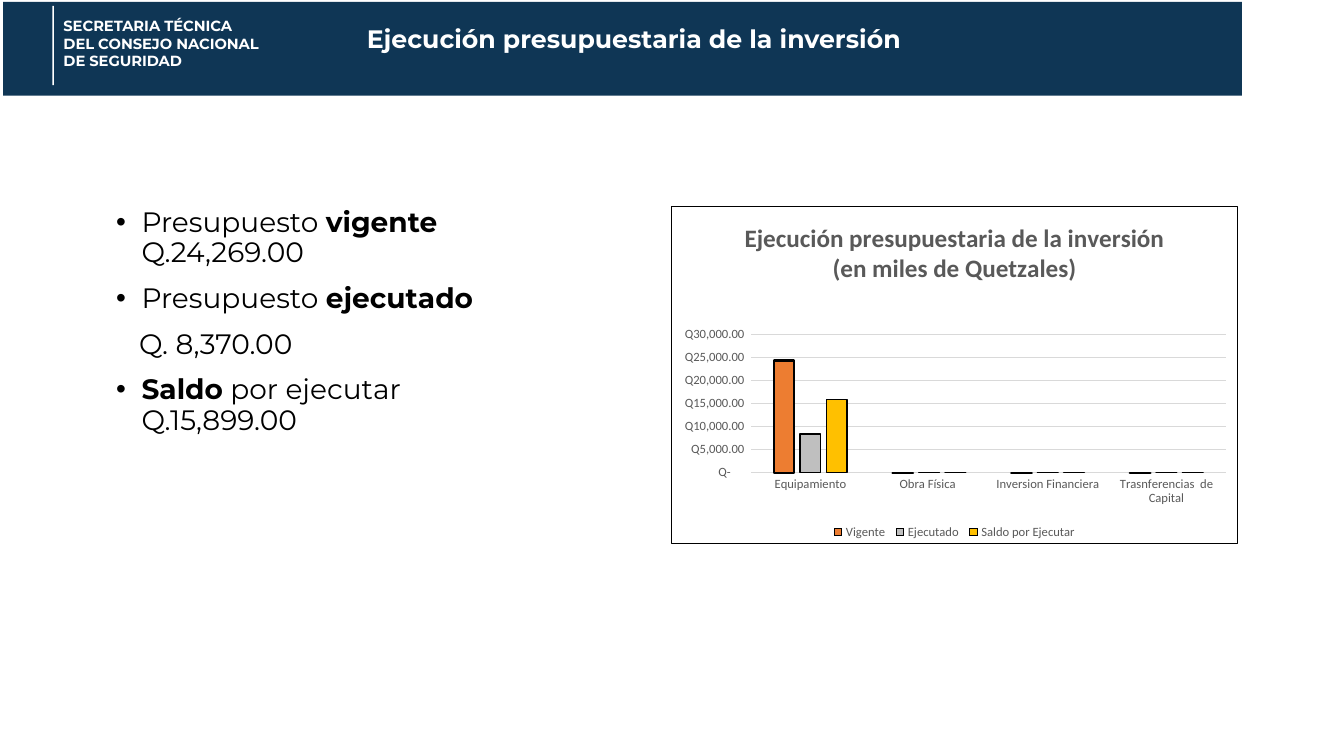
from lxml.etree import SubElement
from pptx import Presentation
from pptx.chart.data import CategoryChartData
from pptx.dml.color import RGBColor
from pptx.enum.chart import XL_CHART_TYPE, XL_LEGEND_POSITION, XL_TICK_MARK
from pptx.enum.shapes import MSO_SHAPE
from pptx.enum.text import MSO_ANCHOR, MSO_AUTO_SIZE, PP_ALIGN
from pptx.oxml import parse_xml
from pptx.oxml.ns import nsdecls, qn
from pptx.util import Cm, Pt

NAVY = RGBColor(0x0F, 0x36, 0x55)
WHITE = RGBColor(0xFF, 0xFF, 0xFF)
BLACK = RGBColor(0x00, 0x00, 0x00)
GREY = RGBColor(0x59, 0x59, 0x59)
GRID = RGBColor(0xD9, 0xD9, 0xD9)
ORANGE = RGBColor(0xED, 0x7D, 0x31)
SILVER = RGBColor(0xBF, 0xBF, 0xBF)
GOLD = RGBColor(0xFF, 0xC0, 0x00)

QUETZAL = '_("Q"* #,##0.00_);_("Q"* \\(#,##0.00\\);_("Q"* "-"??_);_(@_)'
CATEGORIES = ["Equipamiento", "Obra Física ", "Inversion Financiera",
              "Trasnferencias  de Capital"]
SERIES = [  # name, values, fill, outline width
    ("Vigente ", (24300, 0, 0, 0), ORANGE, 1.5),
    ("Ejecutado ", (8400, 0, 0, 0), SILVER, 1),
    ("Saldo por Ejecutar", (15900, 0, 0, 0), GOLD, 1),
]
BUDGET = [  # runs as (text, bold), bulleted
    ([("Presupuesto ", False), ("vigente", True), ("\nQ.24,269.00", False)], True),
    ([("Presupuesto ", False), ("ejecutado", True)], True),
    ([("Q. 8,370.00", False)], False),
    ([("Saldo", True), (" por ejecutar\nQ.15,899.00", False)], True),
]


def set_font(font, size, color, bold=False, name="Montserrat"):
    font.name, font.size, font.bold = name, Pt(size), bold
    font.color.rgb = color


def write(p, text, **fmt):
    """Add text to a paragraph; each newline becomes a line break."""
    for i, line in enumerate(text.split("\n")):
        if i:
            p.add_line_break()
        if line:
            r = p.add_run()
            r.text = line
            set_font(r.font, **fmt)


def add_box(s, x, y, w, h):
    tf = s.shapes.add_textbox(Cm(x), Cm(y), Cm(w), Cm(h)).text_frame
    tf.word_wrap = True
    return tf


def add_bar(s, x, y, w, h, color):
    sp = s.shapes.add_shape(MSO_SHAPE.RECTANGLE, Cm(x), Cm(y), Cm(w), Cm(h))
    sp.shadow.inherit = False
    sp.fill.solid()
    sp.fill.fore_color.rgb = color
    sp.line.fill.background()


def add_header(s, x, y, w, h):
    add_bar(s, x, y, w, h, NAVY)
    tf = add_box(s, x + 1.27, y + 0.25, 9.58, 1.6)
    write(tf.paragraphs[0],
          "SECRETARIA TÉCNICA\nDEL CONSEJO NACIONAL\nDE SEGURIDAD",
          size=10.5, color=WHITE, bold=True)
    add_bar(s, x + 1.24, y + 0.1, 0.04, 2, WHITE)

    title = s.shapes.title
    title.left, title.top = Cm(x + 8.91), Cm(y + 0.41)
    title.width, title.height = Cm(15.44), Cm(1.8)
    tf = title.text_frame
    tf.auto_size = MSO_AUTO_SIZE.NONE
    tf.vertical_anchor = MSO_ANCHOR.TOP
    tf.paragraphs[0].alignment = PP_ALIGN.LEFT
    write(tf.paragraphs[0], "Ejecución presupuestaria de la inversión",
          size=18, color=WHITE, bold=True)
    # The title must lie in front of the band
    title.element.getparent().append(title.element)


def add_budget(s, x, y, w, h):
    tf = add_box(s, x, y, w, h)
    for i, (runs, bulleted) in enumerate(BUDGET):
        p = tf.add_paragraph() if i else tf.paragraphs[0]
        p.line_spacing = 0.9
        p.space_after = Pt(6)
        p.space_before = Pt(5 if i else 0)
        pPr = p._p.get_or_add_pPr()
        pPr.set("marL", str(Cm(1.9 if bulleted else 1.84)))
        if bulleted:
            pPr.set("indent", str(-Cm(0.64)))
            SubElement(pPr, qn("a:buFont")).set("typeface", "Arial")
            SubElement(pPr, qn("a:buChar")).set("char", "•")
        for text, bold in runs:
            write(p, text, size=20, color=BLACK, bold=bold)


def format_chart_title(chart):
    tf = chart.chart_title.text_frame
    lines = ["Ejecución presupuestaria de la inversión", "(en miles de Quetzales)"]
    for i, line in enumerate(lines):
        p = tf.add_paragraph() if i else tf.paragraphs[0]
        write(p, line, size=18, color=GREY, bold=True, name="Calibri")
    chart.chart_title.include_in_layout = False


def format_axes(chart):
    for axis in (chart.category_axis, chart.value_axis):
        axis.major_tick_mark = axis.minor_tick_mark = XL_TICK_MARK.NONE
        set_font(axis.tick_labels.font, 9, GREY, name="Calibri")
    value = chart.value_axis
    value.minimum_scale, value.maximum_scale, value.major_unit = 0, 30000, 5000
    value.tick_labels.number_format = QUETZAL
    value.tick_labels.number_format_is_linked = False
    value.format.line.fill.background()
    for line in (chart.category_axis.format.line, value.major_gridlines.format.line):
        line.color.rgb = GRID
        line.width = Pt(0.75)


def frame_chart(chart):
    """Fix the inner plot area and outline the whole chart."""
    area = chart._chartSpace.chart.plotArea
    for old in area.findall(qn("c:layout")):
        area.remove(old)
    sizes = "".join(f'<c:{k} val="{v}"/>' for k, v in
                    (("x", 0.14), ("y", 0.38), ("w", 0.84), ("h", 0.41)))
    area.insert(0, parse_xml(
        f'<c:layout {nsdecls("c")}><c:manualLayout><c:layoutTarget val="inner"/>'
        f'<c:xMode val="edge"/><c:yMode val="edge"/>{sizes}'
        '</c:manualLayout></c:layout>'))
    chart._chartSpace.chart.addnext(parse_xml(
        f'<c:spPr {nsdecls("c", "a")}><a:solidFill><a:srgbClr val="{WHITE}"/>'
        f'</a:solidFill><a:ln w="{Pt(0.75)}"><a:solidFill><a:srgbClr val="{BLACK}"/>'
        '</a:solidFill></a:ln></c:spPr>'))


def add_budget_chart(s, x, y, w, h):
    data = CategoryChartData(number_format=QUETZAL)
    data.categories = CATEGORIES
    for name, values, _, _ in SERIES:
        data.add_series(name, values)
    chart = s.shapes.add_chart(XL_CHART_TYPE.COLUMN_CLUSTERED,
                               Cm(x), Cm(y), Cm(w), Cm(h), data).chart
    set_font(chart.font, 10, BLACK, name="Calibri")
    format_chart_title(chart)
    format_axes(chart)

    plot = chart.plots[0]
    plot.gap_width, plot.overlap, plot.vary_by_categories = 219, -27, False
    for series, (_, _, color, width) in zip(plot.series, SERIES):
        series.format.fill.solid()
        series.format.fill.fore_color.rgb = color
        series.format.line.color.rgb = BLACK
        series.format.line.width = Pt(width)

    chart.has_legend = True
    chart.legend.position = XL_LEGEND_POSITION.BOTTOM
    chart.legend.include_in_layout = False
    set_font(chart.legend.font, 9, GREY, name="Calibri")
    frame_chart(chart)


def main():
    prs = Presentation()
    prs.slide_width, prs.slide_height = Cm(33.87), Cm(19.05)
    s = prs.slides.add_slide(prs.slide_layouts.get_by_name("Title Only"))
    add_header(s, 0.08, 0.05, 31.22, 2.36)
    add_budget(s, 1.42, 5.13, 13, 6.4)
    add_budget_chart(s, 16.92, 5.18, 14.27, 8.53)
    prs.save("out.pptx")


if __name__ == "__main__":
    main()
